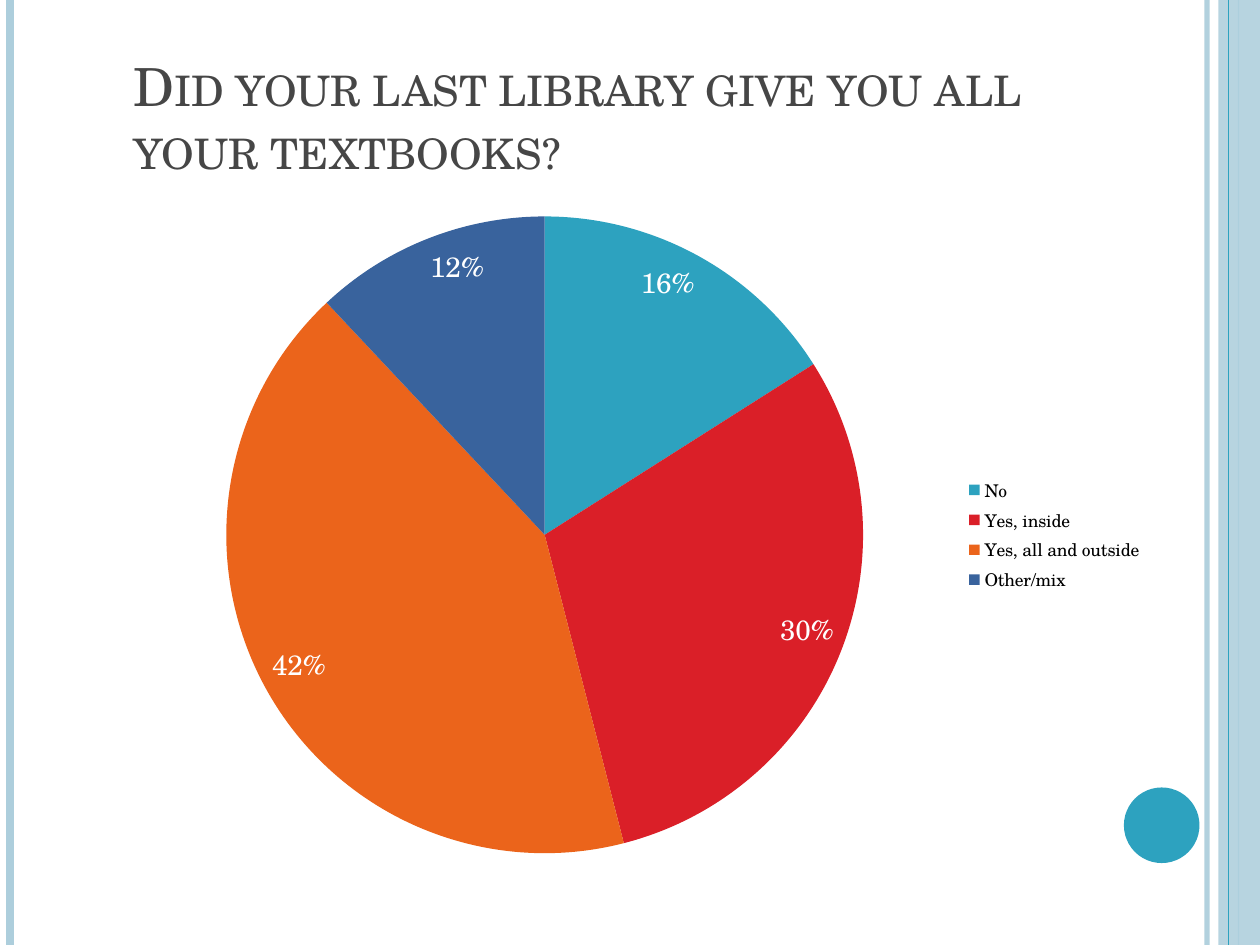
from lxml.etree import SubElement
from pptx import Presentation
from pptx.chart.data import CategoryChartData
from pptx.dml.color import RGBColor
from pptx.enum.chart import XL_CHART_TYPE, XL_LABEL_POSITION, XL_LEGEND_POSITION
from pptx.enum.shapes import MSO_CONNECTOR, MSO_SHAPE
from pptx.enum.text import MSO_ANCHOR
from pptx.oxml.ns import qn
from pptx.util import Inches, Pt

FONT = "TeX Gyre Schola"
COLORS = {
    "pale": "ADCEDC", "teal": "2DA2BF", "red": "DA1F28", "orange": "EB641B",
    "blue": "39639D", "title": "464646", "black": "000000", "white": "FFFFFF",
}
ANSWERS = [
    ("No", 16, "teal"),
    ("Yes, inside", 30, "red"),
    ("Yes, all and outside", 42, "orange"),
    ("Other/mix", 12, "blue"),
]


def rgb(name):
    return RGBColor.from_string(COLORS[name])


def set_alpha(fill_parent, percent):
    color = fill_parent.find(".//" + qn("a:srgbClr"))
    SubElement(color, qn("a:alpha"), val=str(percent * 1000))


def style_font(font, size, color):
    font.name, font.size = FONT, Pt(size)
    font.color.rgb = rgb(color)


def add_text(s, text, box, size=18, color="black", small_caps=False, left_inset=0.1):
    sp = s.shapes.add_textbox(*map(Inches, box))
    tf = sp.text_frame
    tf.word_wrap = True
    tf.vertical_anchor = MSO_ANCHOR.MIDDLE
    tf.margin_left = Inches(left_inset)
    r = tf.paragraphs[0].add_run()
    r.text = text
    style_font(r.font, size, color)
    if small_caps:
        r.font._element.set("cap", "small")


def add_rule(s, x, top, height, color, width, alpha=100):
    line = s.shapes.add_connector(MSO_CONNECTOR.STRAIGHT, Inches(x), Inches(top),
                                  Inches(x), Inches(top + height))
    line.line.color.rgb = rgb(color)
    line.line.width = Pt(width)
    if alpha < 100:
        set_alpha(line._element.spPr, alpha)
    SubElement(line._element.spPr, qn("a:effectLst"))


def add_solid(s, preset, box, color, alpha=100):
    sp = s.shapes.add_shape(preset, *map(Inches, box))
    sp.shadow.inherit = False
    sp.fill.solid()
    sp.fill.fore_color.rgb = rgb(color)
    sp.line.fill.background()
    if alpha < 100:
        set_alpha(sp._element.spPr, alpha)


def add_frame(s, left, top, width, height):
    """Vertical rules, right-hand band and corner disc."""
    right, bottom = left + width, top + height
    add_rule(s, right - 0.42, top, height, "pale", 3, alpha=93)
    add_rule(s, left + 0.08, top, height, "pale", 4.5)
    # The band lies over the first thin rule and under the second
    add_rule(s, right - 0.17, top, height, "teal", 0.75, alpha=40)
    add_solid(s, MSO_SHAPE.RECTANGLE, (right - 0.33, top, 0.33, height), "pale", alpha=87)
    add_rule(s, right - 0.25, top, height, "teal", 0.75)
    add_solid(s, MSO_SHAPE.OVAL, (right - 1.08, bottom - 1.25, 0.6, 0.6), "teal")


def add_answer_pie(s, left, top, width, height):
    data = CategoryChartData()
    data.categories = [name for name, _, _ in ANSWERS]
    data.add_series("Series 1", [value for _, value, _ in ANSWERS])
    chart = s.shapes.add_chart(XL_CHART_TYPE.PIE, Inches(left), Inches(top),
                               Inches(width), Inches(height), data).chart
    style_font(chart.font, 10, "black")
    chart.has_title = False

    # Legend
    chart.has_legend = True
    chart.legend.position = XL_LEGEND_POSITION.RIGHT
    chart.legend.include_in_layout = False

    # Slices
    plot = chart.plots[0]
    plot.vary_by_categories = True
    for i, (_, _, color) in enumerate(ANSWERS):
        fill = plot.series[0].points[i].format.fill
        fill.solid()
        fill.fore_color.rgb = rgb(color)

    # Percent labels
    labels = plot.series[0].data_labels
    labels.show_percentage = True
    labels.show_value = False
    labels.number_format = "0%"
    labels.number_format_is_linked = False
    labels.position = XL_LABEL_POSITION.INSIDE_END
    style_font(labels.font, 16, "white")


def main():
    prs = Presentation()
    prs.slide_width, prs.slide_height = Inches(10), Inches(7.5)
    s = prs.slides.add_slide(prs.slide_layouts[6])
    add_frame(s, 0, 0, 10, 7.5)
    add_text(s, "Did your last library give you all your textbooks?",
             (0.5, 0.3, 8.17, 1.25), size=30, color="title",
             small_caps=True, left_inset=0.56)
    add_answer_pie(s, 1, 1.58, 8.17, 5.33)
    prs.save("out.pptx")


if __name__ == "__main__":
    main()
